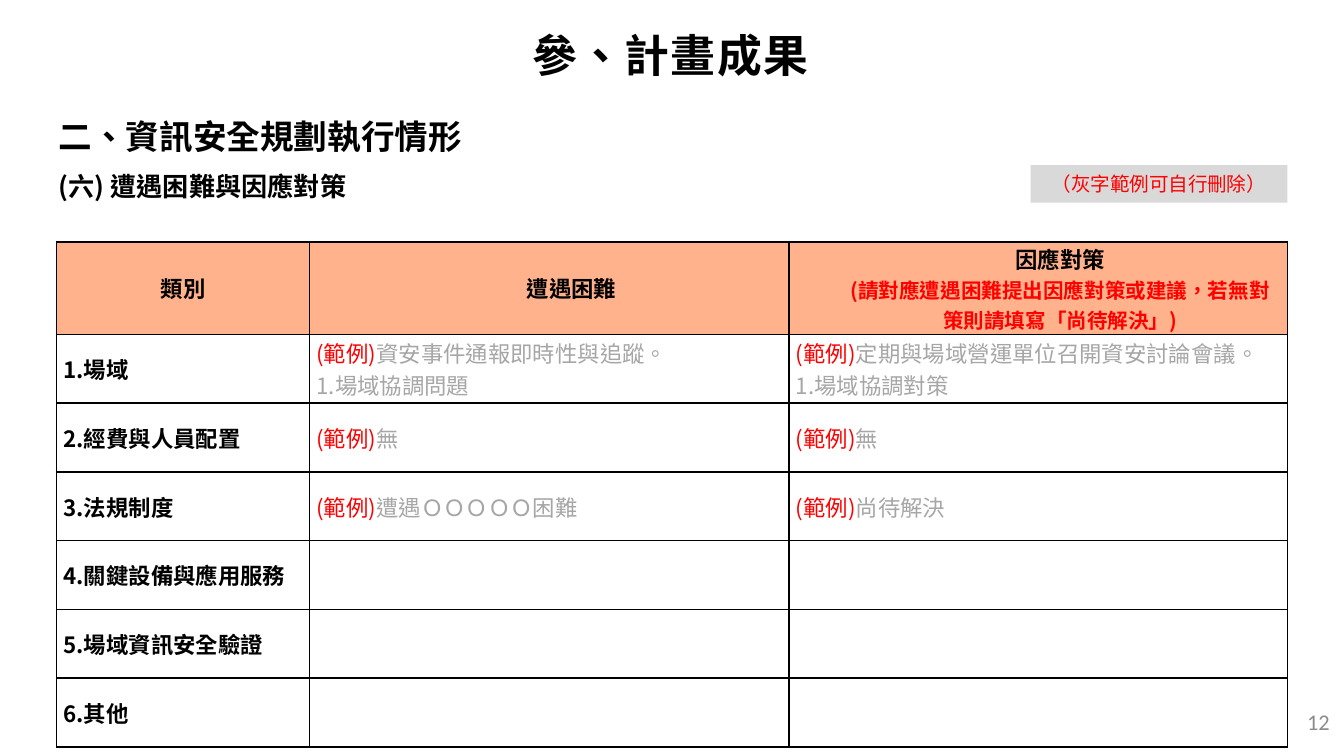
from lxml import etree
from pptx import Presentation
from pptx.dml.color import RGBColor
from pptx.enum.shapes import MSO_SHAPE
from pptx.enum.text import MSO_ANCHOR, PP_ALIGN
from pptx.oxml.ns import qn
from pptx.util import Cm, Pt

BLACK = RGBColor(0, 0, 0)
RED = RGBColor(0xFF, 0, 0)
GRAY = RGBColor(0xA6, 0xA6, 0xA6)
DIM = RGBColor(0x8C, 0x8C, 0x8C)
PALE = RGBColor(0xD9, 0xD9, 0xD9)
PEACH = RGBColor(0xFF, 0xB2, 0x8B)

LEFT, CENTER, RIGHT = PP_ALIGN.LEFT, PP_ALIGN.CENTER, PP_ALIGN.RIGHT
JUSTIFY = PP_ALIGN.JUSTIFY
TOP, MIDDLE = MSO_ANCHOR.TOP, MSO_ANCHOR.MIDDLE
RECT = MSO_SHAPE.RECTANGLE

CJK = "Noto Sans CJK SC"
SAMPLE = "(範例)"
WIDTHS = (4.78, 9.06, 9.42)
HEAD_H, ROW_H = 1.75, 1.3
HEADS = (
    ("類別",),
    ("遭遇困難",),
    ("因應對策", "(請對應遭遇困難提出因應對策或建議，若無對策則請填寫「尚待解決」)"),
)
# Each row: category, then the lines for difficulty and for response
ROWS = (
    ("1.場域",
     ("資安事件通報即時性與追蹤。", "場域協調問題"),
     ("定期與場域營運單位召開資安討論會議。", "場域協調對策")),
    ("2.經費與人員配置", ("無",), ("無",)),
    ("3.法規制度", ("遭遇ＯＯＯＯＯ困難",), ("尚待解決",)),
    ("4.關鍵設備與應用服務", (), ()),
    ("5.場域資訊安全驗證", (), ()),
    ("6.其他", (), ()),
)


def style(run, size, color, bold=False, face=CJK):
    font = run.font
    font.size, font.bold, font.name = Pt(size), bold, face
    font.color.rgb = color
    props = run._r.get_or_add_rPr()
    props.set("lang", "zh-TW")
    etree.SubElement(props, qn("a:ea")).set("typeface", face)


def write(para, text, size, color, bold=False, align=LEFT, face=CJK):
    para.text = text
    para.alignment = align
    style(para.runs[0], size, color, bold, face)


def add_text(slide, place, text, size, color=BLACK, bold=True,
             align=LEFT, anchor=MIDDLE, face=CJK):
    box = slide.shapes.add_textbox(*map(Cm, place))
    frame = box.text_frame
    frame.word_wrap = True
    frame.vertical_anchor = anchor
    write(frame.paragraphs[0], text, size, color, bold, align, face)
    return frame.paragraphs[0].runs[0]


def add_note(slide):
    note = slide.shapes.add_shape(RECT, Cm(19.48), Cm(3.12), Cm(4.85), Cm(0.71))
    note.shadow.inherit = False
    note.fill.solid()
    note.fill.fore_color.rgb = PALE
    note.line.fill.background()
    write(note.text_frame.paragraphs[0], "（灰字範例可自行刪除）",
          10.5, RED, align=CENTER)


def frame_cell(cell, color=None):
    """Set margins, a black border on each side and the fill."""
    cell.margin_left = cell.margin_right = Cm(0.13)
    cell.margin_top = cell.margin_bottom = 0
    cell.vertical_anchor = MIDDLE
    props = cell._tc.get_or_add_tcPr()
    for side in "LRTB":
        line = etree.SubElement(props, qn("a:ln" + side), w=str(Pt(1)))
        fill = etree.SubElement(line, qn("a:solidFill"))
        etree.SubElement(fill, qn("a:srgbClr"), val=str(BLACK))
    if color is None:
        cell.fill.background()
    else:
        cell.fill.solid()
        cell.fill.fore_color.rgb = color


def fill_head(cell, lines, indent):
    frame = cell.text_frame
    frame.text = "\n".join(lines)
    looks = ((12, BLACK), (11, RED))
    for para, line, (size, color) in zip(frame.paragraphs, lines, looks):
        para._p.get_or_add_pPr().set("marL", str(Cm(indent)))
        write(para, line, size, color, True, CENTER)


def fill_sample(cell, lines):
    """Write a marked sample line, then numbered lines."""
    frame = cell.text_frame
    frame.text = "\n".join(lines)
    for num, (para, line) in enumerate(zip(frame.paragraphs, lines)):
        if num:
            props = para._p.get_or_add_pPr()
            etree.SubElement(props, qn("a:buFont"), typeface=CJK)
            etree.SubElement(props, qn("a:buAutoNum"), type="arabicPeriod")
            write(para, line, 12, GRAY, align=JUSTIFY)
        else:
            write(para, SAMPLE, 12, RED, align=JUSTIFY)
            run = para.add_run()
            run.text = line
            style(run, 12, GRAY)


def add_grid(slide):
    high = HEAD_H + ROW_H * len(ROWS)
    grid = slide.shapes.add_table(
        len(ROWS) + 1, len(WIDTHS), Cm(1.07), Cm(4.57),
        Cm(sum(WIDTHS)), Cm(high)).table
    grid.first_row = grid.horz_banding = False
    for col, width in zip(grid.columns, WIDTHS):
        col.width = Cm(width)
    for num, row in enumerate(grid.rows):
        row.height = Cm(ROW_H if num else HEAD_H)
        for cell in row.cells:
            frame_cell(cell, None if num else PEACH)
    for col, lines in enumerate(HEADS):
        fill_head(grid.cell(0, col), lines, 0.84 if col else 0)
    for num, (name, *samples) in enumerate(ROWS, 1):
        para = grid.cell(num, 0).text_frame.paragraphs[0]
        write(para, name, 12, BLACK, True)
        for col, lines in enumerate(samples, 1):
            if lines:
                fill_sample(grid.cell(num, col), lines)


def main():
    deck = Presentation()
    deck.slide_width, deck.slide_height = Cm(25.4), Cm(14.29)
    slide = deck.slides.add_slide(deck.slide_layouts[6])
    title = add_text(slide, (-0.03, -0.05, 25.4, 2.16), "參、計畫成果",
                     24, align=CENTER)
    title._r.get_or_add_rPr().set("spc", "80")
    add_grid(slide)
    add_note(slide)
    add_text(slide, (19.66, 13.26, 5.72, 0.76), "12", 12, DIM, False,
             RIGHT, face="Calibri")
    add_text(slide, (0.86, 3.1, 18.77, 0.84), "(六) 遭遇困難與因應對策", 14)
    add_text(slide, (0.86, 2.06, 23.29, 1.02), "二、資訊安全規劃執行情形",
             18, anchor=TOP)
    deck.save("out.pptx")


if __name__ == "__main__":
    main()
